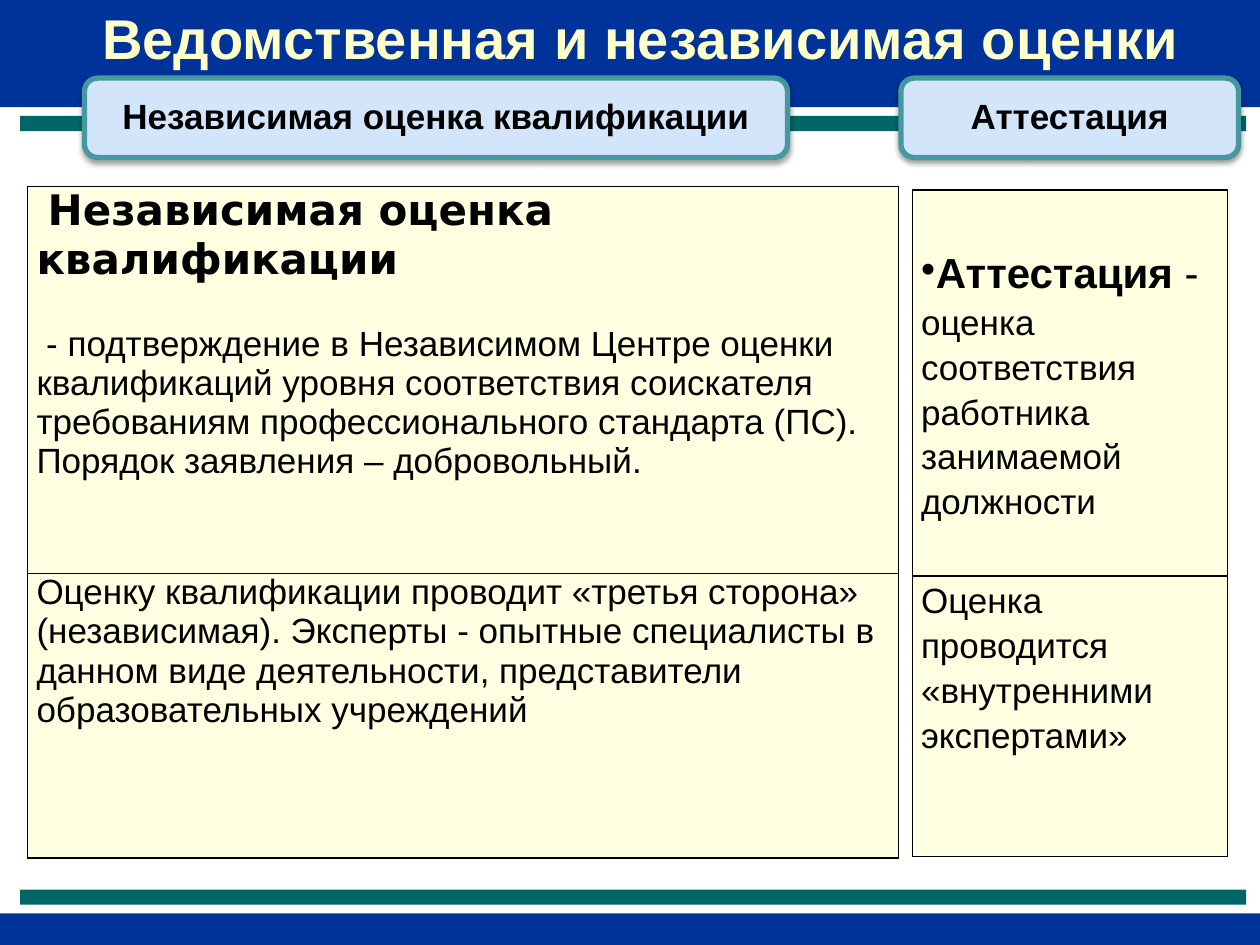
from lxml import etree
from pptx import Presentation
from pptx import util as u
from pptx.dml.color import RGBColor
from pptx.enum import shapes, text
from pptx.oxml import parse_xml

NS = 'xmlns:a="http://schemas.openxmlformats.org/drawingml/2006/main"'
BLUE, GREEN, CREAM, BLACK = "003399", "006666", "FFFFE1", "000000"


def paint(color_owner, hex_color):
    """Give a fill or a font a solid colour."""
    if hasattr(color_owner, "solid"):
        color_owner.solid()
        color_owner.fore_color.rgb = RGBColor.from_string(hex_color)
    else:
        color_owner.color.rgb = RGBColor.from_string(hex_color)


def write(p, runs, color=BLACK, **fmt):
    """Add (text, size, bold, font) runs and set paragraph attributes."""
    for name, value in fmt.items():
        setattr(p, name, value)
    for words, size, bold, font in runs:
        r = p.add_run()
        r.text = words
        for name, value in {"size": u.Pt(size), "bold": bold, "name": font}.items():
            setattr(r.font, name, value)
        paint(r.font, color)


prs = Presentation()
prs.slide_width, prs.slide_height = u.Inches(10), u.Inches(7.5)
s = prs.slides.add_slide(prs.slide_layouts[6])

# Top and bottom bands with their rules
for x, y, w, h, color in [
    (0, 7.25, 10, 0.27, BLUE),
    (0, 0, 10, 0.85, BLUE),
    (0.16, 0.92, 9.73, 0.12, GREEN),
    (0.16, 7.06, 9.73, 0.12, GREEN),
]:
    sp = s.shapes.add_shape(shapes.MSO_SHAPE.RECTANGLE, *map(u.Inches, (x, y, w, h)))
    sp.shadow.inherit = False
    paint(sp.fill, color)
    sp.line.fill.background()

CENTERED = {"alignment": text.PP_ALIGN.CENTER, "line_spacing": 0.9}

# Title
tf = s.shapes.add_textbox(*map(u.Inches, (0.68, 0.03, 8.81, 0.59))).text_frame
tf.word_wrap = False
tf.vertical_anchor = text.MSO_ANCHOR.MIDDLE
write(tf.paragraphs[0], [("Ведомственная и независимая оценки", 32, True, "Arial")],
      "FFFFCC", **CENTERED)

# Column headings
for x, w, words in [(0.67, 5.58, "Независимая оценка квалификации"),
                    (7.15, 2.68, "Аттестация")]:
    sp = s.shapes.add_shape(shapes.MSO_SHAPE.ROUNDED_RECTANGLE,
                            *map(u.Inches, (x, 0.62, w, 0.63)))
    sp.adjustments[0] = 0.167
    paint(sp.fill, "D2E5FA")
    paint(sp.line.fill, "4597A0")
    sp.line.width = u.Pt(3)
    sp.shadow.inherit = False
    effects = sp._element.spPr.find("{*}effectLst")
    effects.append(parse_xml(
        f'<a:outerShdw {NS} blurRad="{u.Pt(3.1)}" dist="{u.Pt(1.6)}" dir="5400000" '
        'rotWithShape="0"><a:srgbClr val="000000"><a:alpha val="38000"/></a:srgbClr>'
        '</a:outerShdw>'))
    tf = sp.text_frame
    tf.word_wrap = False
    tf.vertical_anchor = text.MSO_ANCHOR.MIDDLE
    write(tf.paragraphs[0], [(words, 20, True, "Arial")], **CENTERED)

# One single-column table per kind of assessment; a cell is (anchor, paragraphs)
TOP, MIDDLE = text.MSO_ANCHOR.TOP, text.MSO_ANCHOR.MIDDLE
LOOSE = {"line_spacing": 1.15, "space_before": u.Pt(4)}
tables = [
    ((0.22, 1.48, 6.91), (3.07, 2.26), [
        (TOP, [
            ([(" ", 23, False, "Arial"),
              ("Независимая оценка квалификации", 24, True, "DejaVu Sans")], {}),
            ([(" - подтверждение в Независимом Центре оценки квалификаций уровня "
               "соответствия соискателя требованиям профессионального стандарта (ПС). "
               "Порядок заявления – добровольный.", 20, False, "Arial")],
             {"space_before": u.Pt(23)}),
        ]),
        (TOP, [
            ([("Оценку квалификации проводит «третья сторона» (независимая). Эксперты - "
               "опытные специалисты в данном виде деятельности, представители "
               "образовательных учреждений", 20, False, "Arial")], {}),
        ]),
    ]),
    ((7.24, 1.51, 2.5), (3.06, 2.23), [
        (MIDDLE, [
            ([("Аттестация", 24, True, "Arial"), (" - ", 24, False, "Arial"),
              ("оценка соответствия работника занимаемой должности", 20, False, "Arial")],
             LOOSE),
        ]),
        (TOP, [
            ([("Оценка проводится «внутренними экспертами»", 20, False, "Arial")], LOOSE),
        ]),
    ]),
]
for (x, y, w), heights, cells in tables:
    frame = s.shapes.add_table(len(cells), 1, *map(u.Inches, (x, y, w, sum(heights))))
    table = frame.table
    table.first_row = table.horz_banding = False
    for i, (height, (anchor, paragraphs)) in enumerate(zip(heights, cells)):
        table.rows[i].height = u.Inches(height)
        cell = table.cell(i, 0)
        for name, value in {"margin_left": 0.07, "margin_right": 0.07,
                            "margin_top": 0, "margin_bottom": 0}.items():
            setattr(cell, name, u.Inches(value))
        cell.vertical_anchor = anchor
        tcPr = cell._tc.get_or_add_tcPr()
        for side in "LRTB":
            tcPr.append(parse_xml(
                f'<a:ln{side} {NS} w="{u.Pt(1)}"><a:solidFill><a:srgbClr val="{BLACK}"/>'
                f'</a:solidFill></a:ln{side}>'))
        paint(cell.fill, CREAM)
        tf = cell.text_frame
        for n, (runs, fmt) in enumerate(paragraphs):
            write(tf.add_paragraph() if n else tf.paragraphs[0], runs, **fmt)

# Bullet before the definition in the last table
pPr = table.cell(0, 0).text_frame.paragraphs[0]._p.get_or_add_pPr()
pPr.set("marL", "0")
pPr.set("indent", "0")
pPr.append(etree.fromstring(f'<a:buChar {NS} char="•"/>'))

prs.save("out.pptx")
